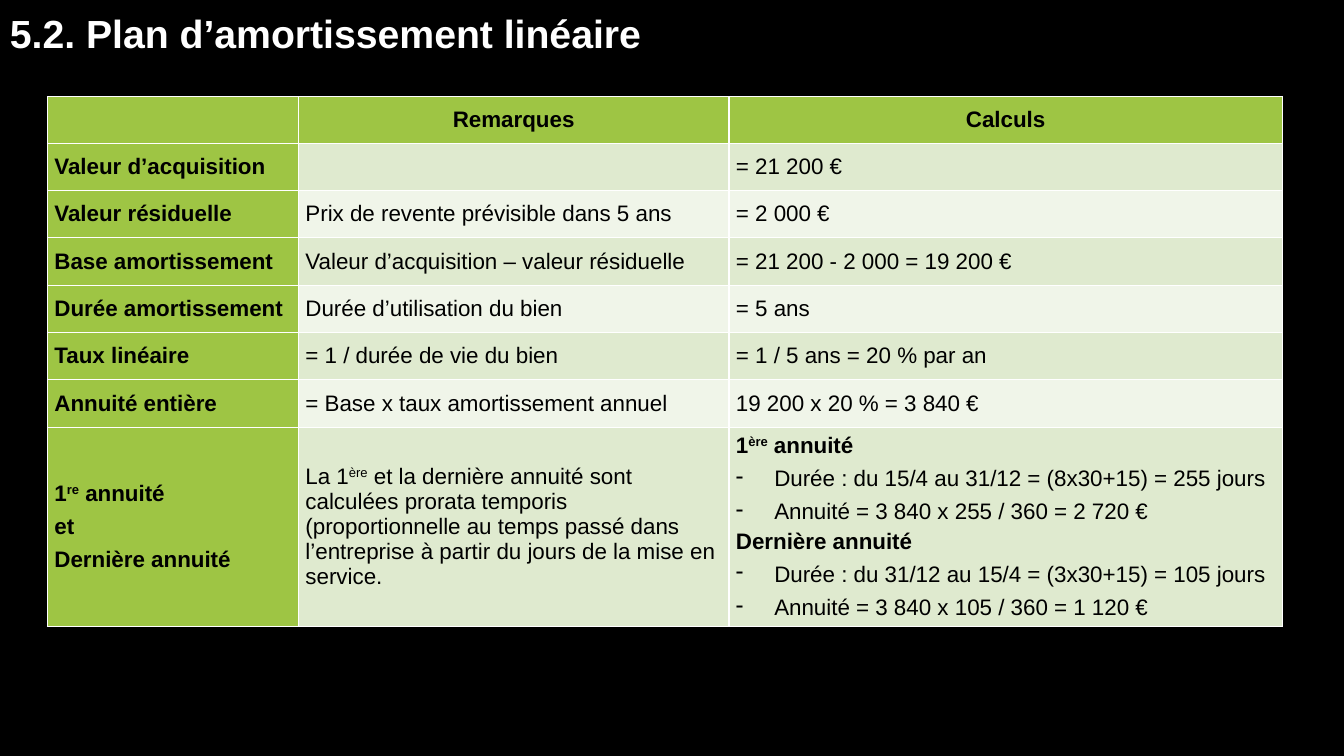
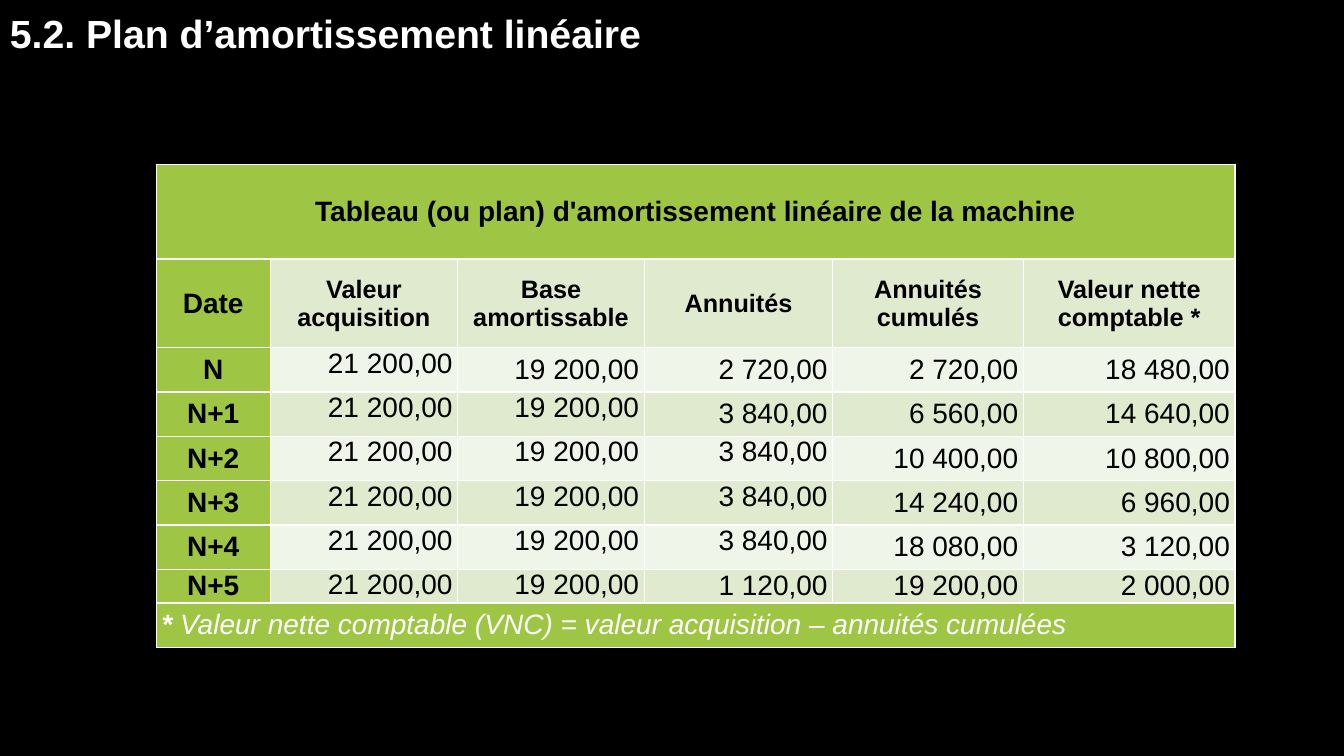
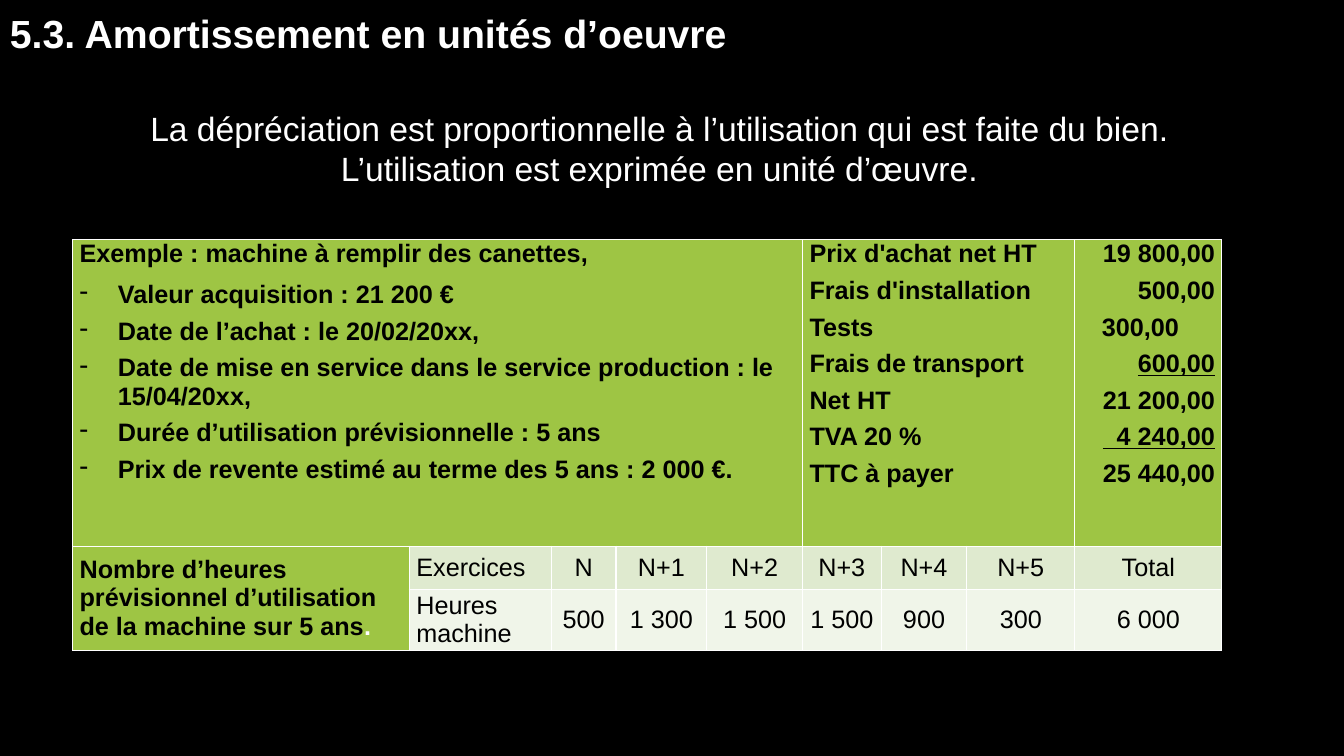
from lxml.etree import SubElement
from pptx import Presentation
from pptx.dml.color import RGBColor
from pptx.enum.text import MSO_ANCHOR, PP_ALIGN
from pptx.oxml.ns import qn
from pptx.util import Pt

PX = 9144  # 100 px to the inch
FONT = "Arial"
BLACK = RGBColor(0x00, 0x00, 0x00)
WHITE = RGBColor(0xFF, 0xFF, 0xFF)
GREEN = RGBColor(0x9E, 0xC5, 0x44)
BANDS = [RGBColor(0xDF, 0xEA, 0xCF), RGBColor(0xF0, 0xF5, 0xE9)]
LEFT, CENTER, RIGHT = PP_ALIGN.LEFT, PP_ALIGN.CENTER, PP_ALIGN.RIGHT
TOP, MIDDLE = MSO_ANCHOR.TOP, MSO_ANCHOR.MIDDLE
DASH_INDENT = 38


def write(frame, text, size, color, bold=False, align=LEFT):
    """One paragraph a line; "- " opens a dashed item, ^...^ is superscript."""
    frame.word_wrap = True
    for index, line in enumerate(text.split("\n")):
        paragraph = frame.paragraphs[0] if index == 0 else frame.add_paragraph()
        paragraph.alignment = align
        paragraph.space_before = Pt(6)
        if line.startswith("- "):
            line = line[2:]
            properties = paragraph._p.get_or_add_pPr()
            properties.set("marL", str(DASH_INDENT * PX))
            properties.set("indent", str(-DASH_INDENT * PX))
            SubElement(properties, qn("a:buChar")).set("char", "-")
        paragraph.font.name = FONT
        paragraph.font.size = Pt(size)
        paragraph.font.bold = bold
        paragraph.font.color.rgb = color
        for part, words in enumerate(line.split("^")):
            run = paragraph.add_run()
            run.text = words
            if part % 2:
                run.font._element.set("baseline", "30000")


def fill_cell(cell, fill, text, size, bold=False, align=LEFT, anchor=MIDDLE, inset=7):
    cell.fill.solid()
    cell.fill.fore_color.rgb = fill
    cell.margin_left = cell.margin_right = inset * PX
    cell.margin_top = cell.margin_bottom = 0
    cell.vertical_anchor = anchor
    if text:
        write(cell.text_frame, text, size, BLACK, bold, align)


presentation = Presentation()
presentation.slide_width = 1333 * PX
presentation.slide_height = 750 * PX
background = presentation.slide_master.background.fill
background.solid()
background.fore_color.rgb = BLACK

# Title, table left and top, column widths, row heights
LAYOUTS = [
    ("5.2. Plan d’amortissement linéaire", 47, 96,
     [249, 427, 549], [46] + [47] * 6 + [184]),
    ("5.2. Plan d’amortissement linéaire", 155, 163,
     [113, 186, 185, 187, 189, 210], [94, 88] + [44] * 5 + [27, 44]),
    ("5.3. Amortissement en unités d’oeuvre", 72, 238,
     [334, 141, 64, 90, 95, 78, 85, 107, 146], [304, 43, 57]),
]
tables = []
for title, left, top, widths, heights in LAYOUTS:
    slide = presentation.slides.add_slide(presentation.slide_layouts[6])
    title_box = slide.shapes.add_textbox(0, 4 * PX, 1291 * PX, 57 * PX)
    write(title_box.text_frame, title, 28, WHITE, bold=True)
    table = slide.shapes.add_table(
        len(heights), len(widths), left * PX, top * PX,
        sum(widths) * PX, sum(heights) * PX).table
    for column, width in zip(table.columns, widths):
        column.width = width * PX
    for row, height in zip(table.rows, heights):
        row.height = height * PX
    tables.append(table)
method_table, plan_table, example_table = tables

# Slide 1: how each value is worked out
METHOD = [
    ("", "Remarques", "Calculs"),
    ("Valeur d’acquisition", "", "= 21 200 €"),
    ("Valeur résiduelle", "Prix de revente prévisible dans 5 ans", "= 2 000 €"),
    ("Base amortissement", "Valeur d’acquisition – valeur résiduelle",
     "= 21 200 - 2 000 = 19 200 €"),
    ("Durée amortissement", "Durée d’utilisation du bien", "= 5 ans"),
    ("Taux linéaire", "= 1 / durée de vie du bien", "= 1 / 5 ans = 20 % par an"),
    ("Annuité entière", "= Base x taux amortissement annuel",
     "19 200 x 20 % = 3 840 €"),
    ("1^re^ annuité\net\nDernière annuité",
     "La 1^ère^ et la dernière annuité sont calculées prorata temporis "
     "(proportionnelle au temps passé dans l’entreprise à partir du jours "
     "de la mise en service.",
     "1^ère^ annuité\n"
     "- Durée : du 15/4 au 31/12 = (8x30+15) = 255 jours\n"
     "- Annuité = 3 840 x 255 / 360 = 2 720 €\n"
     "Dernière annuité\n"
     "- Durée : du 31/12 au 15/4 = (3x30+15) = 105 jours\n"
     "- Annuité = 3 840 x 105 / 360 = 1 120 €"),
]
for r, texts in enumerate(METHOD):
    for c, text in enumerate(texts):
        heading = r == 0 or c == 0
        fill_cell(method_table.cell(r, c), GREEN if heading else BANDS[(r - 1) % 2],
                  text, 16, heading, CENTER if r == 0 else LEFT)
annuities = method_table.cell(7, 2).text_frame.paragraphs
annuities[0].font.bold = annuities[3].font.bold = True
annuities[3].space_before = Pt(3)

# Slide 2: the depreciation schedule
plan_table.cell(0, 0).merge(plan_table.cell(0, 5))
fill_cell(plan_table.cell(0, 0), GREEN,
          "Tableau (ou plan) d'amortissement linéaire de la machine",
          20, True, CENTER, inset=5)
PLAN = [
    ("Date", "Valeur acquisition", "Base amortissable", "Annuités",
     "Annuités cumulés", "Valeur nette comptable *"),
    ("N", "21 200,00", "19 200,00", "2 720,00", "2 720,00", "18 480,00"),
    ("N+1", "21 200,00", "19 200,00", "3 840,00", "6 560,00", "14 640,00"),
    ("N+2", "21 200,00", "19 200,00", "3 840,00", "10 400,00", "10 800,00"),
    ("N+3", "21 200,00", "19 200,00", "3 840,00", "14 240,00", "6 960,00"),
    ("N+4", "21 200,00", "19 200,00", "3 840,00", "18 080,00", "3 120,00"),
    ("N+5", "21 200,00", "19 200,00", "1 120,00", "19 200,00", "2 000,00"),
]
# Number of cells set at the top, after the date, in each row
TOP_CELLS = [0, 1, 2, 3, 3, 3, 2]
for r, (texts, top_cells) in enumerate(zip(PLAN, TOP_CELLS)):
    for c, text in enumerate(texts):
        heading = r == 0 or c == 0
        fill_cell(plan_table.cell(r + 1, c), GREEN if c == 0 else BANDS[r % 2],
                  text, 18 if r == 0 and c > 0 else 20, heading,
                  CENTER if heading else RIGHT,
                  TOP if 1 <= c <= top_cells else MIDDLE, inset=5)
plan_table.cell(8, 0).merge(plan_table.cell(8, 5))
fill_cell(plan_table.cell(8, 0), GREEN, "* ", 20, inset=5)
footnote = plan_table.cell(8, 0).text_frame.paragraphs[0]
footnote.font.italic = True
footnote.font.color.rgb = WHITE
footnote.runs[0].font.bold = True
footnote.add_run().text = (
    "Valeur nette comptable (VNC) = valeur acquisition – annuités cumulées")

# Slide 3: depreciation by units of use
intro_box = slide.shapes.add_textbox(89 * PX, 102 * PX, 1130 * PX, 91 * PX)
write(intro_box.text_frame,
      "La dépréciation est proportionnelle à l’utilisation qui est faite du bien. "
      "L’utilisation est exprimée en unité d’œuvre.", 24, WHITE, align=CENTER)

example_table.cell(0, 0).merge(example_table.cell(0, 4))
example_table.cell(0, 5).merge(example_table.cell(0, 7))
example_table.cell(1, 0).merge(example_table.cell(2, 0))
fill_cell(example_table.cell(0, 0), GREEN,
          "Exemple : machine à remplir des canettes,\n"
          "- Valeur acquisition : 21 200 €\n"
          "- Date de l’achat : le 20/02/20xx,\n"
          "- Date de mise en service dans le service production : le 15/04/20xx,\n"
          "- Durée d’utilisation prévisionnelle : 5 ans\n"
          "- Prix de revente estimé au terme des 5 ans : 2 000 €.",
          18, True, anchor=TOP)
example_table.cell(0, 0).text_frame.paragraphs[0].space_after = Pt(3)
fill_cell(example_table.cell(0, 5), GREEN,
          "Prix d'achat net HT\nFrais d'installation\nTests\nFrais de transport\n"
          "Net HT\nTVA 20 %\nTTC à payer", 18, True, anchor=TOP)
fill_cell(example_table.cell(0, 8), GREEN,
          "19 800,00\n500,00\n300,00\n600,00\n21 200,00\n  4 240,00\n25 440,00",
          18, True, RIGHT, TOP)
amounts = example_table.cell(0, 8).text_frame.paragraphs
amounts[3].font.underline = amounts[5].font.underline = True
amounts[2].alignment = LEFT
amounts[2]._p.get_or_add_pPr().set("marL", str(20 * PX))

fill_cell(example_table.cell(1, 0), GREEN,
          "Nombre d’heures prévisionnel d’utilisation de la machine sur 5 ans",
          18, True)
full_stop = example_table.cell(1, 0).text_frame.paragraphs[0].add_run()
full_stop.text = "."
full_stop.font.color.rgb = WHITE
HOURS = [
    ("Exercices", "N", "N+1", "N+2", "N+3", "N+4", "N+5", "Total"),
    ("Heures machine", "500", "1 300", "1 500", "1 500", "900", "300", "6 000"),
]
for r, texts in enumerate(HOURS):
    for c, text in enumerate(texts):
        fill_cell(example_table.cell(r + 1, c + 1), BANDS[r], text, 18,
                  align=LEFT if c == 0 else CENTER)

presentation.save("out.pptx")
